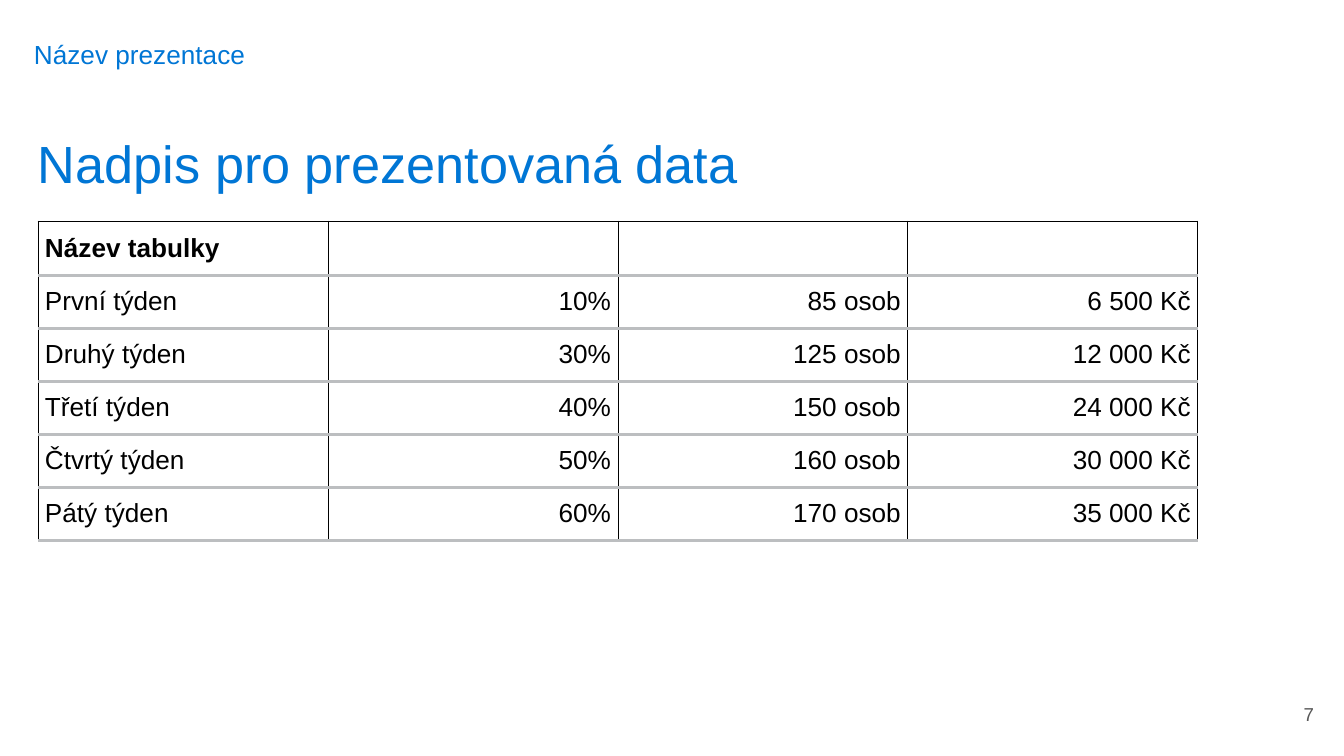
from dataclasses import dataclass

from lxml.etree import SubElement
from pptx import Presentation
from pptx.dml.color import RGBColor
from pptx.enum.text import MSO_ANCHOR, PP_ALIGN
from pptx.oxml.ns import qn
from pptx.util import Emu, Pt

EMU_PER_PX = 914400 / 134.4


def px(length):
    return Emu(round(length * EMU_PER_PX))


@dataclass(frozen=True)
class Theme:
    font: str = "Arial"
    accent: str = "0076D5"
    text: str = "000000"
    muted: str = "585858"
    rule: str = "BCBEC0"
    paper: str = "FFFFFF"
    title_size: int = 28
    body_size: int = 14
    number_size: int = 10


class SlideBuilder:
    def __init__(self, slide, theme):
        self.slide = slide
        self.theme = theme

    def add_run(self, paragraph, text, size, color, bold=False):
        run = paragraph.add_run()
        run.text = text
        run.font.name = self.theme.font
        run.font.size = Pt(size)
        run.font.bold = bold
        run.font.color.rgb = RGBColor.from_string(color)

    def add_text(self, box, text, size, color, insets,
                 align=PP_ALIGN.LEFT, anchor=MSO_ANCHOR.TOP, wrap=True):
        shape = self.slide.shapes.add_textbox(*map(px, box))
        frame = shape.text_frame
        frame.word_wrap = wrap
        frame.vertical_anchor = anchor
        (frame.margin_left, frame.margin_top,
         frame.margin_right, frame.margin_bottom) = map(px, insets)
        paragraph = frame.paragraphs[0]
        paragraph.alignment = align
        self.add_run(paragraph, text, size, color)

    def set_borders(self, cell, borders):
        properties = cell._tc.get_or_add_tcPr()
        for index, (side, (color, width)) in enumerate(borders.items()):
            line = SubElement(properties, qn(f"a:{side}"), w=str(Pt(width)))
            properties.insert(index, line)
            fill = SubElement(line, qn("a:solidFill"))
            SubElement(fill, qn("a:srgbClr"), val=color)

    def add_table(self, left, top, column_width, row_height, rows):
        theme = self.theme
        column_count = len(rows[0])
        shape = self.slide.shapes.add_table(
            len(rows), column_count, px(left), px(top),
            px(column_width * column_count), px(row_height * len(rows)))
        table = shape.table
        table.first_row = table.horz_banding = False
        for column in table.columns:
            column.width = px(column_width)
        for row in table.rows:
            row.height = px(row_height)

        thin, thick = (theme.text, 0.5), (theme.rule, 2)
        for row_index, row in enumerate(rows):
            header = row_index == 0
            for column_index, text in enumerate(row):
                cell = table.cell(row_index, column_index)
                cell.vertical_anchor = MSO_ANCHOR.MIDDLE
                cell.margin_left = cell.margin_right = px(7)
                cell.margin_top = cell.margin_bottom = px(7)
                if header:
                    cell.fill.background()
                else:
                    cell.fill.solid()
                    cell.fill.fore_color.rgb = RGBColor.from_string(theme.paper)
                self.set_borders(cell, {
                    "lnL": thin, "lnR": thin,
                    "lnT": thin if header else thick, "lnB": thick})
                paragraph = cell.text_frame.paragraphs[0]
                paragraph.alignment = PP_ALIGN.RIGHT if column_index else PP_ALIGN.LEFT
                if text:
                    self.add_run(paragraph, text, theme.body_size, theme.text, header)


def main():
    presentation = Presentation()
    presentation.slide_width, presentation.slide_height = px(1344), px(756)
    slide = presentation.slides.add_slide(presentation.slide_layouts[6])
    theme = Theme()
    builder = SlideBuilder(slide, theme)

    # Slide number
    builder.add_text((1277, 691, 50, 47), "7", theme.number_size, theme.muted,
                     (13, 13, 13, 13), PP_ALIGN.RIGHT, MSO_ANCHOR.MIDDLE, wrap=False)

    # Heading and presentation name
    builder.add_text((38, 113, 1111, 85), "Nadpis pro prezentovaná data",
                     theme.title_size, theme.accent, (0, 18, 13, 13))
    builder.add_text((17, 38, 1111, 52), "Název prezentace",
                     theme.body_size, theme.accent, (17, 0, 13, 0))

    # Weekly data
    builder.add_table(38, 221, 290, 53, [
        ("Název tabulky", "", "", ""),
        ("První týden", "10%", "85 osob", "6 500 Kč"),
        ("Druhý týden", "30%", "125 osob", "12 000 Kč"),
        ("Třetí týden", "40%", "150 osob", "24 000 Kč"),
        ("Čtvrtý týden", "50%", "160 osob", "30 000 Kč"),
        ("Pátý týden", "60%", "170 osob", "35 000 Kč"),
    ])

    presentation.save("out.pptx")


if __name__ == "__main__":
    main()
